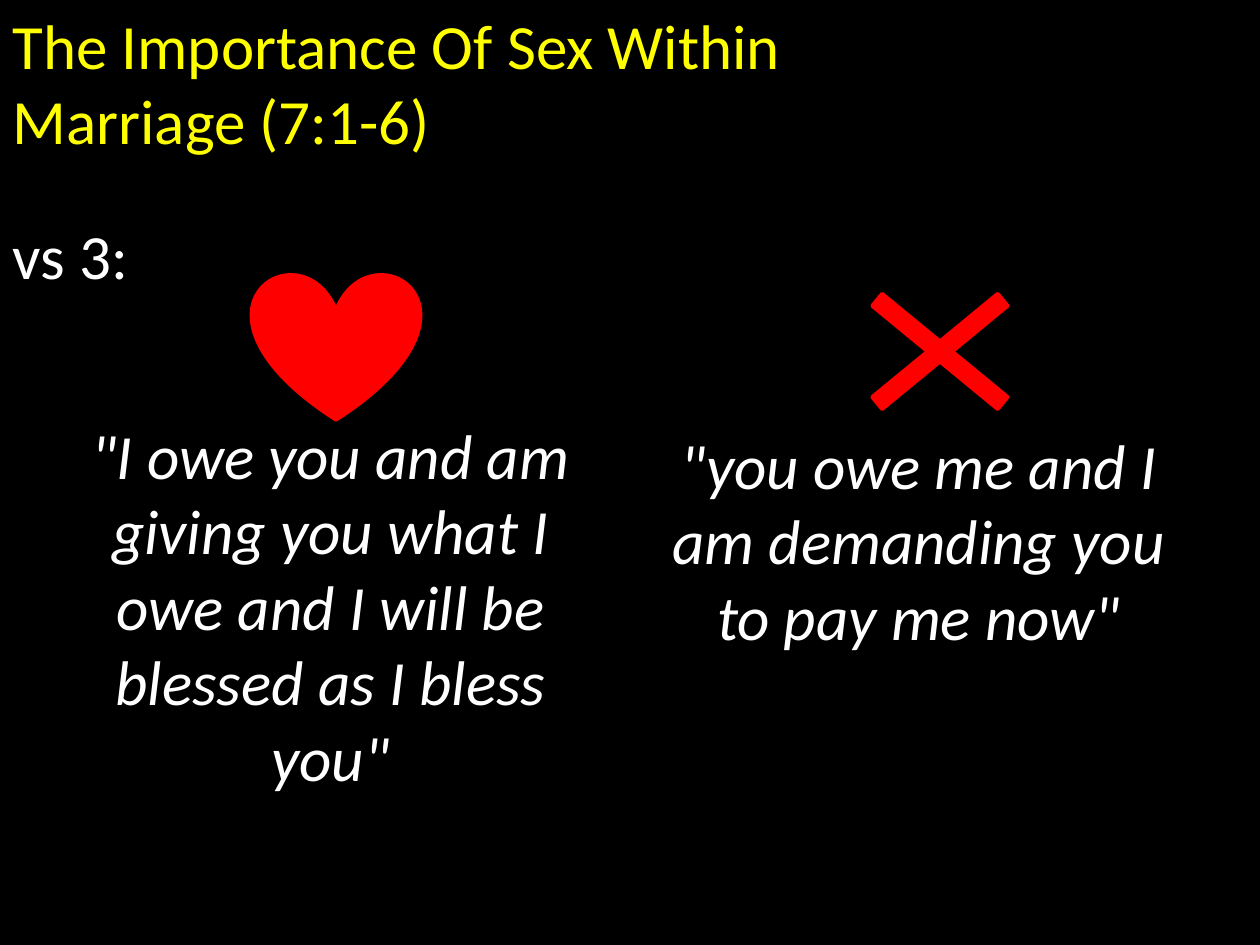
import pptx
import pptx.util
import pptx.dml.color
import pptx.enum.shapes
import pptx.enum.text

SCALE = 914400 / 126  # EMU per px
WIDTH, HEIGHT = 1260, 945
BLACK, WHITE, YELLOW, RED = "000000", "FFFFFF", "FFFF00", "FF0000"
ALIGN = pptx.enum.text.PP_ALIGN
SHAPE = pptx.enum.shapes.MSO_SHAPE


def px(length):
    return pptx.util.Emu(round(length * SCALE))


def color(hex_string):
    return pptx.dml.color.RGBColor.from_string(hex_string)


def place(shape, box):
    shape.left, shape.top, shape.width, shape.height = map(px, box)


def write(shape, text, hex_string, align=ALIGN.LEFT, italic=False):
    frame = shape.text_frame
    frame.word_wrap = True
    frame.auto_size = pptx.enum.text.MSO_AUTO_SIZE.SHAPE_TO_FIT_TEXT
    frame.vertical_anchor = pptx.enum.text.MSO_ANCHOR.TOP
    frame.text = text
    paragraph = frame.paragraphs[0]
    paragraph.alignment = align
    paragraph.font.name = "Calibri"
    paragraph.font.size = pptx.util.Pt(36)
    paragraph.font.italic = italic
    paragraph.font.color.rgb = color(hex_string)


def add_text(slide, box, text, **style):
    write(slide.shapes.add_textbox(*map(px, box)), text, WHITE, **style)


def add_heading(slide, box):
    """Title at the top of the box, verse label below it."""
    left, top, width, _ = box
    place(slide.shapes.title, (left, top, 955, 165))
    write(slide.shapes.title, "The Importance Of Sex Within Marriage (7:1-6)", YELLOW)
    add_text(slide, (left, top + 210, width, 89), "vs 3:")


def add_attitude(slide, box, kind, symbol_box, quote, quote_top):
    """Red symbol with a centred quote under it; offsets are from the box."""
    left, top, width, height = box
    x, y, symbol_width, symbol_height = symbol_box
    symbol = slide.shapes.add_shape(
        kind, *map(px, (left + x, top + y, symbol_width, symbol_height)))
    symbol.shadow.inherit = False
    symbol.fill.solid()
    symbol.fill.fore_color.rgb = color(RED)
    symbol.line.color.rgb = color(RED)
    symbol.line.width = pptx.util.Pt(2)
    add_text(slide, (left, top + quote_top, width, height - quote_top), quote,
             align=ALIGN.CENTER, italic=True)
    return symbol


def main():
    presentation = pptx.Presentation()
    presentation.slide_width, presentation.slide_height = px(WIDTH), px(HEIGHT)
    slide = presentation.slides.add_slide(presentation.slide_layouts[5])
    slide.background.fill.solid()
    slide.background.fill.fore_color.rgb = color(BLACK)

    add_heading(slide, (0, 0, WIDTH, 299))

    # Giving attitude on the left, demanding attitude on the right
    add_attitude(slide, (63, 252, 535, 552), SHAPE.HEART, (189, 21, 168, 147),
                 '"I owe you and am giving you what I owe and I will be blessed as I bless you"',
                 158)
    cross = add_attitude(slide, (651, 252, 535, 410), SHAPE.MATH_MULTIPLY,
                         (168, 0, 242, 199),
                         '"you owe me and I am demanding you to pay me now"', 168)
    cross.adjustments[0] = 0.08

    presentation.save("out.pptx")


if __name__ == "__main__":
    main()
